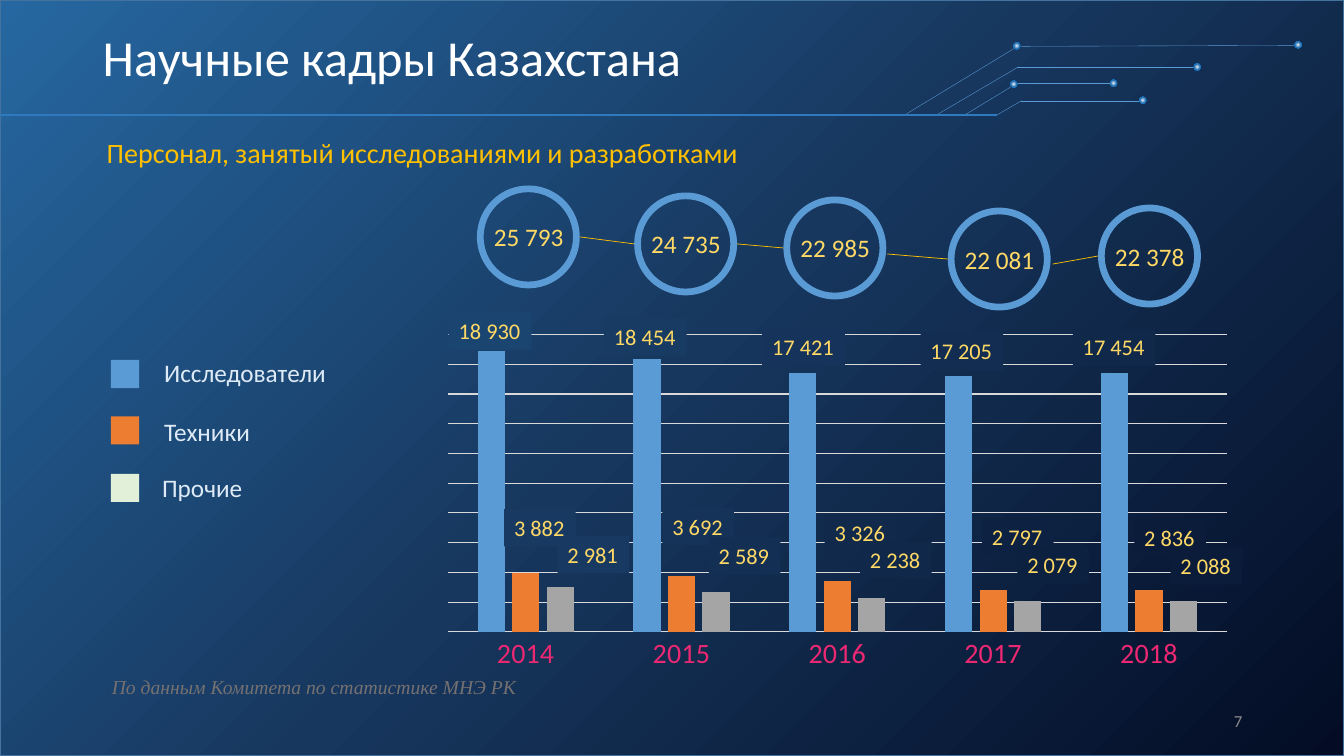
from dataclasses import dataclass
from typing import NamedTuple, Optional

from lxml import etree
from pptx import Presentation
from pptx.chart.data import CategoryChartData
from pptx.dml.color import RGBColor
from pptx.enum.chart import XL_CHART_TYPE, XL_TICK_LABEL_POSITION, XL_TICK_MARK
from pptx.enum.shapes import MSO_CONNECTOR, MSO_SHAPE
from pptx.enum.text import MSO_ANCHOR, MSO_AUTO_SIZE, PP_ALIGN
from pptx.oxml import parse_xml
from pptx.oxml.ns import nsdecls, qn
from pptx.util import Pt

RECT, OVAL, DONUT = MSO_SHAPE.RECTANGLE, MSO_SHAPE.OVAL, MSO_SHAPE.DONUT
STRAIGHT = MSO_CONNECTOR.STRAIGHT
COLUMNS = XL_CHART_TYPE.COLUMN_CLUSTERED
NO_TICK, NEXT_TO_AXIS = XL_TICK_MARK.NONE, XL_TICK_LABEL_POSITION.NEXT_TO_AXIS
TOP, MIDDLE = MSO_ANCHOR.TOP, MSO_ANCHOR.MIDDLE
LEFT, RIGHT = PP_ALIGN.LEFT, PP_ALIGN.RIGHT
GROW, FIXED = MSO_AUTO_SIZE.SHAPE_TO_FIT_TEXT, MSO_AUTO_SIZE.NONE
EMU_PER_PX = 9144
WIDTH, HEIGHT = 1333, 750
RING, DOT, SWATCH = 102, 7, 28
BLUE, ORANGE, GRAY, AMBER, GOLD = "5B9BD5", "ED7D31", "A5A5A5", "FFC000", "FFD966"
NIGHT = ((0, "030C24"), (50, "17375E"), (100, "2667A1"))
GLOW = ((0, "DEEBF7"), (50, "2E75B6"), (100, "0070C0"))


class Box(NamedTuple):
    left: int
    top: int
    width: int
    height: int


class Trace(NamedTuple):
    x1: int
    y1: int
    x2: int
    y2: int


@dataclass
class Style:
    size: int
    color: str
    font: str = "Calibri"
    italic: bool = False
    align: PP_ALIGN = LEFT
    anchor: MSO_ANCHOR = TOP
    wrap: bool = True
    grow: bool = True
    spacing: Optional[float] = None
    indent: int = 0


class Count(NamedTuple):
    people: int
    left: int
    top: int
    fill: str


class Year(NamedTuple):
    name: str
    total: Count
    roles: tuple[Count, Count, Count]


class Role(NamedTuple):
    name: str
    swatch: str
    column: str
    swatch_top: int
    name_left: int
    name_top: int
    name_width: int


ROLES = (
    Role("Исследователи", BLUE, BLUE, 357, 153, 350, 182),
    Role("Техники", ORANGE, ORANGE, 413, 153, 408, 107),
    Role("Прочие", "E2F0D9", GRAY, 470, 151, 464, 100),
)
YEARS = (
    Year("2014", Count(25793, 473, 184, BLUE), (
        Count(18930, 445, 310, "1B4571"), Count(3882, 500, 505, "183A62"), Count(2981, 553, 532, "183A62"))),
    Year("2015", Count(24735, 629, 191, BLUE), (
        Count(18454, 599, 316, "183B64"), Count(3692, 657, 504, "153258"), Count(2589, 703, 533, "132F54"))),
    Year("2016", Count(22985, 777, 195, BLUE), (
        Count(17421, 756, 326, "16345B"), Count(3326, 818, 510, "112A4C"), Count(2238, 853, 537, "102849"))),
    Year("2017", Count(22081, 940, 206, BLUE), (
        Count(17205, 913, 330, "122D51"), Count(2797, 974, 514, "0D2242"), Count(2079, 1009, 542, "0C203F"))),
    Year("2018", Count(22378, 1089, 203, BLUE), (
        Count(17454, 1064, 326, "10284A"), Count(2836, 1125, 515, "0B1C3A"), Count(2088, 1161, 543, "0B1C3A"))),
)
PEAK = max(count.people for year in YEARS for count in year.roles)
GRID_STEP, GRID_TOP = 10.57, 105.7
CIRCUIT = (
    Trace(899, 113, 1006, 48), Trace(1013, 46, 1286, 45), Trace(929, 114, 1009, 67),
    Trace(1009, 67, 1187, 67), Trace(957, 114, 1003, 86), Trace(1009, 83, 1105, 83),
    Trace(989, 114, 1013, 100), Trace(1013, 100, 1130, 100),
)
CIRCUIT_DOTS = ((1005, 42), (1284, 41), (1184, 63), (1002, 80), (1101, 79), (1130, 96))
TOTAL_LINKS = (
    Trace(575, 235, 629, 242), Trace(731, 242, 777, 246),
    Trace(880, 252, 940, 257), Trace(1044, 262, 1089, 254),
)


def px(length: int) -> int:
    return length * EMU_PER_PX


def rgb(color: str) -> RGBColor:
    return RGBColor.from_string(color)


def spaced(number: int) -> str:
    return f"{number:,}".replace(",", " ")


def add_text(slide, text: str, box: Box, style: Style, fill: Optional[str] = None) -> None:
    label = slide.shapes.add_textbox(*map(px, box))
    if fill:
        label.fill.solid()
        label.fill.fore_color.rgb = rgb(fill)
    frame = label.text_frame
    frame.word_wrap = style.wrap
    frame.auto_size = GROW if style.grow else FIXED
    frame.vertical_anchor = style.anchor
    paragraph = frame.paragraphs[0]
    paragraph.text = text
    paragraph.alignment = style.align
    paragraph.line_spacing = style.spacing
    if style.indent:
        paragraph._p.get_or_add_pPr().set("indent", str(px(style.indent)))
    font = paragraph.font
    font.name, font.size, font.italic = style.font, Pt(style.size), style.italic
    font.color.rgb = rgb(style.color)


def add_figure(slide, kind: MSO_SHAPE, box: Box, fill: Optional[str] = None):
    figure = slide.shapes.add_shape(kind, *map(px, box))
    figure.shadow.inherit = False
    figure.line.fill.background()
    if fill:
        figure.fill.solid()
        figure.fill.fore_color.rgb = rgb(fill)
    return figure


def add_radial(slide, kind: MSO_SHAPE, box: Box, stops: tuple, focus: str):
    figure = add_figure(slide, kind, box)
    marks = "".join(f'<a:gs pos="{at * 1000}"><a:srgbClr val="{color}"/></a:gs>' for at, color in stops)
    figure._element.spPr.insert(2, parse_xml(
        f'<a:gradFill {nsdecls("a")} rotWithShape="1"><a:gsLst>{marks}</a:gsLst>'
        f'<a:path path="circle"><a:fillToRect {focus}/></a:path></a:gradFill>'))
    return figure


def add_trace(slide, trace: Trace, color: str, width: float) -> None:
    line = slide.shapes.add_connector(STRAIGHT, *map(px, trace))
    line.line.color.rgb = rgb(color)
    line.line.width = Pt(width)
    etree.SubElement(line._element.spPr, qn("a:effectLst"))


def add_staff_chart(slide, box: Box) -> None:
    staff = CategoryChartData()
    staff.categories = [year.name for year in YEARS]
    for index, role in enumerate(ROLES):
        staff.add_series(role.name, [round(100 * year.roles[index].people / PEAK) for year in YEARS])
    chart = slide.shapes.add_chart(COLUMNS, *map(px, box), staff).chart
    chart.has_legend = chart.has_title = False
    chart.font.name, chart.font.size = "Calibri", Pt(10)
    chart.font.color.rgb = rgb("000000")
    plot = chart.plots[0]
    plot.gap_width, plot.overlap, plot.vary_by_categories = 219, -27, False
    for series, role in zip(plot.series, ROLES):
        series.format.fill.solid()
        series.format.fill.fore_color.rgb = rgb(role.column)
    years, people = chart.category_axis, chart.value_axis
    years.major_tick_mark = years.minor_tick_mark = NO_TICK
    years.tick_label_position = NEXT_TO_AXIS
    years_font = years.tick_labels.font
    years_font.name, years_font.size = "Calibri", Pt(20)
    years_font.color.rgb = rgb("EC2873")
    people.minimum_scale, people.maximum_scale, people.major_unit = 0, GRID_TOP, GRID_STEP
    people.visible, people.has_major_gridlines = False, True
    for line in (years.format.line, people.major_gridlines.format.line):
        line.color.rgb = rgb("D9D9D9")
        line.width = Pt(0.75)
    area = chart._chartSpace.find(".//" + qn("c:plotArea"))
    for automatic in area.findall(qn("c:layout")):
        area.remove(automatic)
    area.insert(0, parse_xml(
        f'<c:layout {nsdecls("c")}><c:manualLayout><c:layoutTarget val="inner"/><c:xMode val="edge"/>'
        '<c:yMode val="edge"/><c:x val="0.02"/><c:y val="0.02"/><c:w val="0.96"/><c:h val="0.85"/>'
        '</c:manualLayout></c:layout>'))


def main() -> None:
    deck = Presentation()
    deck.slide_width, deck.slide_height = px(WIDTH), px(HEIGHT)
    slide = deck.slides.add_slide(deck.slide_layouts[6])
    backdrop = add_radial(slide, RECT, Box(0, 0, WIDTH, HEIGHT), NIGHT, 'l="100000" t="100000"')
    backdrop.line.color.rgb = rgb("43739E")
    backdrop.line.width = Pt(1)
    add_text(slide, "Научные кадры Казахстана", Box(92, 26, 1150, 67),
             Style(36, "FFFFFF", anchor=MIDDLE, grow=False, spacing=0.9))
    add_text(slide, "Персонал, занятый исследованиями и разработками", Box(96, 130, 1065, 44), Style(20, AMBER))
    add_text(slide, "По данным Комитета по статистике МНЭ РК", Box(52, 661, 479, 37),
             Style(14, "767171", "Times New Roman", italic=True, spacing=1.15, indent=49))
    for role in ROLES:
        add_figure(slide, RECT, Box(110, role.swatch_top, SWATCH, SWATCH), role.swatch)
        add_text(slide, role.name, Box(role.name_left, role.name_top, role.name_width, 40),
                 Style(18, "DEEBF7", wrap=False))
    for trace in CIRCUIT:
        add_trace(slide, trace, BLUE, 0.25)
    add_trace(slide, Trace(0, 114, 989, 114), "2F7ABF", 1)
    for left, top in CIRCUIT_DOTS:
        add_radial(slide, OVAL, Box(left, top, DOT, DOT), GLOW, 'l="50000" t="50000" r="50000" b="50000"')
    add_staff_chart(slide, Box(428, 325, 805, 347))
    for year in YEARS:
        total = year.total
        add_text(slide, spaced(total.people), Box(total.left + 7, total.top + 31, 90, 40),
                 Style(18, GOLD, wrap=False))
        ring = add_figure(slide, DONUT, Box(total.left, total.top, RING, RING), total.fill)
        ring.adjustments[0] = 0.065
        for count in year.roles:
            width = 82 if count.people >= 10000 else 71
            add_text(slide, spaced(count.people), Box(count.left, count.top, width, 37),
                     Style(16, GOLD, wrap=False), count.fill)
    for link in TOTAL_LINKS:
        add_trace(slide, link, AMBER, 0.5)
    add_text(slide, "7", Box(942, 695, 300, 40), Style(12, "8C8C8C", align=RIGHT, anchor=MIDDLE, grow=False))
    deck.save("out.pptx")


if __name__ == "__main__":
    main()
